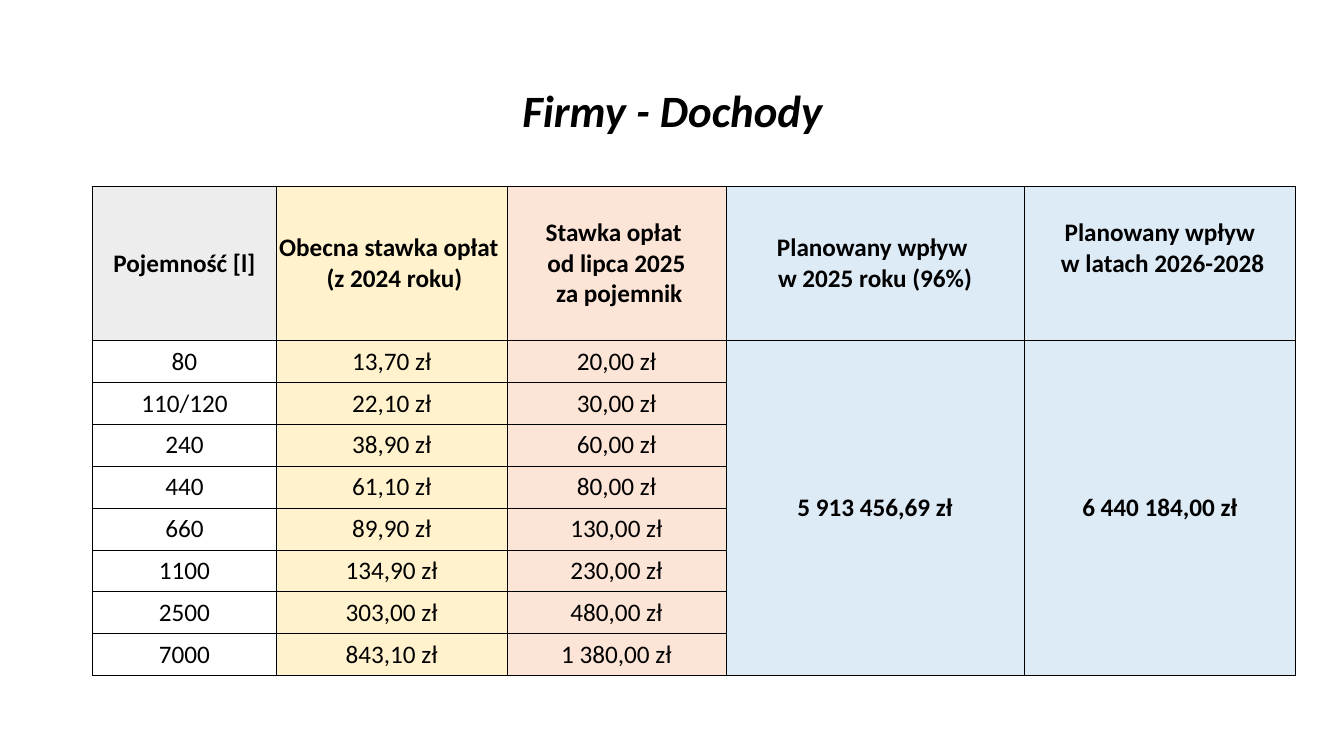
from dataclasses import dataclass

from lxml import etree
from pptx import Presentation
from pptx.dml.color import RGBColor
from pptx.enum.text import MSO_ANCHOR, PP_ALIGN
from pptx.oxml.ns import qn
from pptx.util import Inches, Pt

CENTER = PP_ALIGN.CENTER
MIDDLE = MSO_ANCHOR.MIDDLE

BLACK = RGBColor(0x00, 0x00, 0x00)
GREY = RGBColor(0xED, 0xED, 0xED)
YELLOW = RGBColor(0xFF, 0xF2, 0xCC)
ORANGE = RGBColor(0xFC, 0xE4, 0xD6)
BLUE = RGBColor(0xDD, 0xEB, 0xF7)

LEFT, TOP, HEIGHT = 0.92, 1.85, 4.85
HEADER_HEIGHT = 1.53
BORDER_WIDTH = Pt(0.5)
ALL_SIDES = ("L", "R", "T", "B")


@dataclass(frozen=True)
class Column:
    width: float
    header: str
    values: tuple[str, ...]
    header_fill: RGBColor | None = None
    fill: RGBColor | None = None
    merged: bool = False
    header_bottom: float = 0.05
    sides: tuple[str, ...] = ALL_SIDES


COLUMNS = (
    Column(1.82, "Pojemność [l]",
           ("80", "110/120", "240", "440", "660", "1100", "2500", "7000"),
           GREY),
    Column(2.29, "Obecna stawka opłat \n (z 2024 roku)",
           ("13,70 zł", "22,10 zł", "38,90 zł", "61,10 zł",
            "89,90 zł", "134,90 zł", "303,00 zł", "843,10 zł"),
           YELLOW, YELLOW),
    Column(2.17, "Stawka opłat \nod lipca 2025\n za pojemnik",
           ("20,00 zł", "30,00 zł", "60,00 zł", "80,00 zł",
            "130,00 zł", "230,00 zł", "480,00 zł", "1 380,00 zł"),
           ORANGE, ORANGE),
    Column(2.96, "Planowany wpływ \nw 2025 roku (96%)",
           ("5 913 456,69 zł",), BLUE, BLUE, merged=True),
    Column(2.69, "Planowany wpływ\n w latach 2026-2028",
           ("6 440 184,00 zł",), BLUE, BLUE, merged=True, header_bottom=0.35),
    Column(0.64, "", (), sides=("L",)),
)
BODY_ROWS = len(COLUMNS[0].values)


def write(p, text: str, **font) -> None:
    p.text = text
    p.alignment = CENTER
    for r in p.runs:
        r.font.color.rgb = BLACK
        for name, value in {"name": "Calibri", **font}.items():
            setattr(r.font, name, value)


def set_borders(cell, sides: tuple[str, ...]) -> None:
    """Give the cell lines on the named sides and none on the others."""
    tc_pr = cell._tc.get_or_add_tcPr()
    for i, side in enumerate(ALL_SIDES):
        ln = etree.Element(qn(f"a:ln{side}"), w=str(BORDER_WIDTH))
        if side in sides:
            fill = etree.SubElement(ln, qn("a:solidFill"))
            etree.SubElement(fill, qn("a:srgbClr"), val=str(BLACK))
        else:
            etree.SubElement(ln, qn("a:noFill"))
        tc_pr.insert(i, ln)


def format_cell(cell, fill: RGBColor | None, sides: tuple[str, ...]) -> None:
    layout = {"vertical_anchor": MIDDLE,
              "margin_left": Inches(0.01), "margin_right": Inches(0.01),
              "margin_top": Inches(0.05), "margin_bottom": Inches(0.05)}
    for name, value in layout.items():
        setattr(cell, name, value)
    if fill is None:
        cell.fill.background()
    else:
        cell.fill.solid()
        cell.fill.fore_color.rgb = fill
    set_borders(cell, sides)


def add_title(s, text: str) -> None:
    title = s.shapes.title
    box = {"left": LEFT, "top": 0.4, "width": 11.5, "height": 1.45}
    for name, value in box.items():
        setattr(title, name, Inches(value))
    tf = title.text_frame
    tf.vertical_anchor = MIDDLE
    p = tf.paragraphs[0]
    p.line_spacing = 0.9
    write(p, text, size=Pt(32), bold=True, italic=True)


def add_rates_table(s) -> None:
    width = sum(col.width for col in COLUMNS)
    table = s.shapes.add_table(BODY_ROWS + 1, len(COLUMNS), Inches(LEFT),
                               Inches(TOP), Inches(width), Inches(HEIGHT)).table
    table.first_row = table.horz_banding = False
    body_height = (HEIGHT - HEADER_HEIGHT) / BODY_ROWS
    for i, row in enumerate(table.rows):
        row.height = Inches(body_height if i else HEADER_HEIGHT)

    for c, col in enumerate(COLUMNS):
        table.columns[c].width = Inches(col.width)
        for i in range(BODY_ROWS + 1):
            format_cell(table.cell(i, c), col.fill if i else col.header_fill,
                        col.sides)
        table.cell(0, c).margin_bottom = Inches(col.header_bottom)
        if col.merged:
            table.cell(1, c).merge(table.cell(BODY_ROWS, c))
        for i, text in enumerate((col.header, *col.values)):
            write(table.cell(i, c).text_frame.paragraphs[0], text,
                  size=Pt(18), bold=i == 0 or col.merged)


def main() -> None:
    prs = Presentation()
    prs.slide_width, prs.slide_height = Inches(13.33), Inches(7.5)
    s = prs.slides.add_slide(prs.slide_layouts.get_by_name("Title Only"))
    add_title(s, "Firmy - Dochody")
    add_rates_table(s)
    prs.save("out.pptx")


if __name__ == "__main__":
    main()
